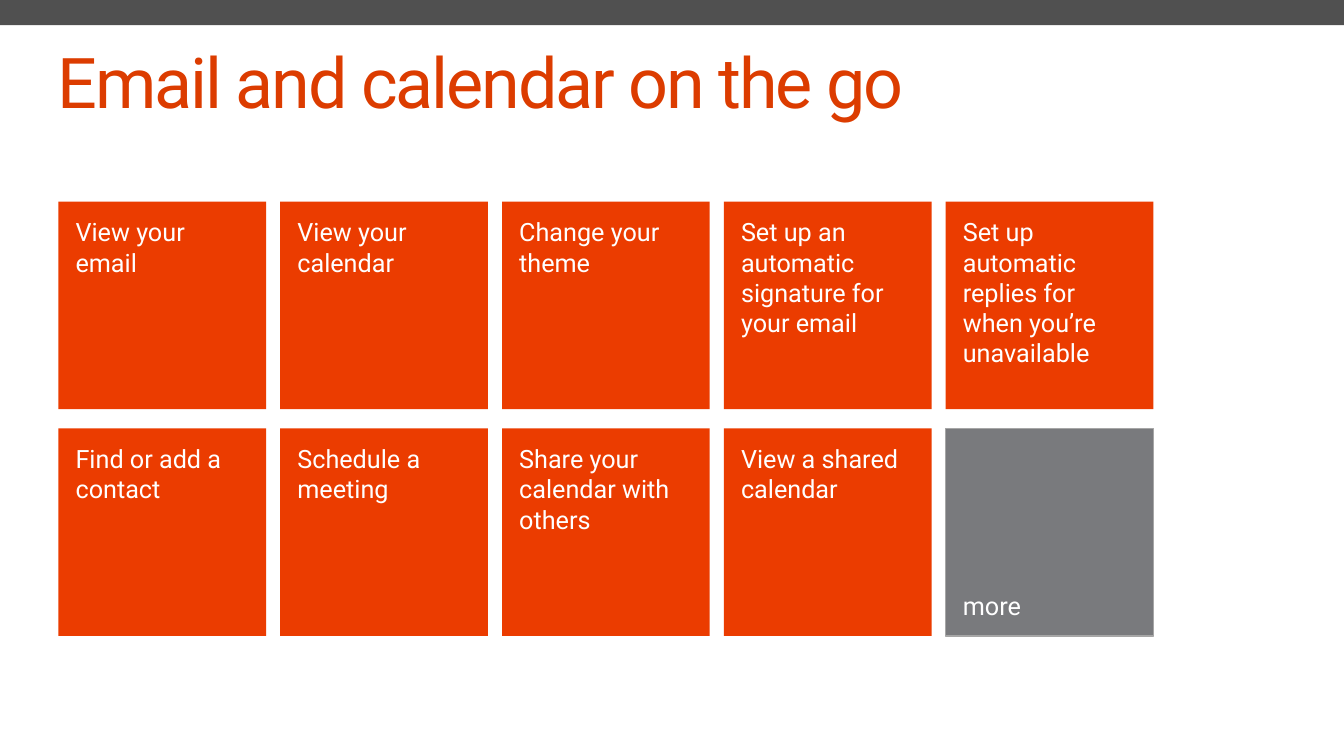
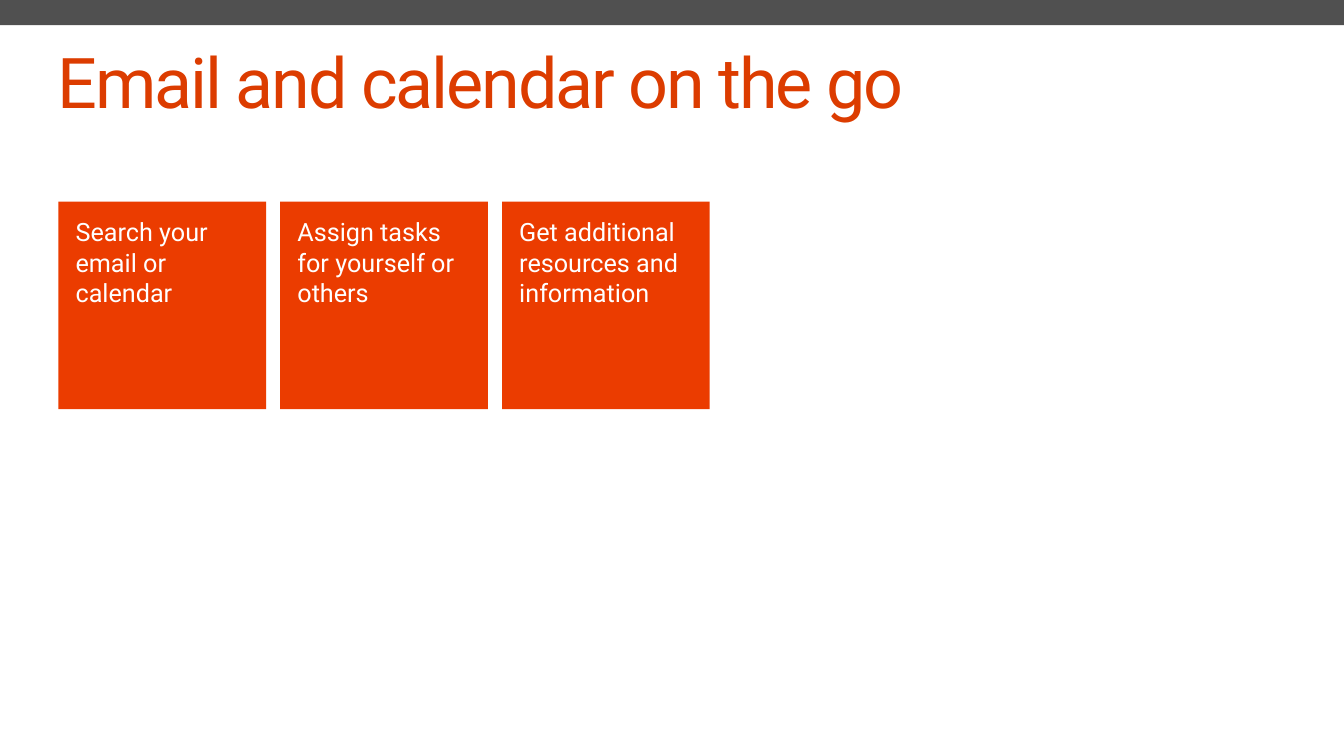
import pptx
import pptx.dml.color
import pptx.enum.shapes
import pptx.enum.text
import pptx.util

Inches = pptx.util.Inches
Anchor = pptx.enum.text.MSO_ANCHOR

THEME = {
    "font": "Roboto",
    "title_size": 50,
    "tile_size": 18,
    "band": "505050",
    "title": "DC3C00",
    "tile": "EB3C00",
    "more": "797A7D",
    "more_line": "A6A6A6",
    "text": "FFFFFF",
}

# Tile grid, in inches
COLUMNS = 5
GRID_LEFT, GRID_TOP = 0.58, 2
COLUMN_PITCH, ROW_PITCH = 2.2, 2.25
TILE_SIDE = 2.06

TITLE = "Email and calendar on the go"
MORE = "more"
SLIDE_TILES = [
    [
        "View your email",
        "View your calendar",
        "Change your theme",
        "Set up an automatic signature for your email",
        "Set up automatic replies for when you’re unavailable",
        "Find or add a contact",
        "Schedule a meeting",
        "Share your calendar with others",
        "View a shared calendar",
        MORE,
    ],
    [
        "Search your email or calendar",
        "Assign tasks for yourself or others",
        "Get additional resources and information",
    ],
]


def add_rectangle(slide, left, top, width, height, fill):
    shape = slide.shapes.add_shape(
        pptx.enum.shapes.MSO_SHAPE.RECTANGLE, left, top, width, height)
    shape.shadow.inherit = False
    shape.fill.solid()
    shape.fill.fore_color.rgb = pptx.dml.color.RGBColor.from_string(fill)
    shape.line.fill.background()
    return shape


def set_text(shape, text, size, color, margins, anchor=Anchor.TOP):
    frame = shape.text_frame
    frame.text = text
    frame_format = dict(zip(
        ("margin_left", "margin_top", "margin_right", "margin_bottom"),
        map(Inches, margins)))
    frame_format.update(word_wrap=True, vertical_anchor=anchor,
                        auto_size=pptx.enum.text.MSO_AUTO_SIZE.NONE)
    for name, value in frame_format.items():
        setattr(frame, name, value)
    paragraph = frame.paragraphs[0]
    paragraph.alignment = pptx.enum.text.PP_ALIGN.LEFT
    font = paragraph.runs[0].font
    for name, value in {"name": THEME["font"], "size": pptx.util.Pt(size)}.items():
        setattr(font, name, value)
    font.color.rgb = pptx.dml.color.RGBColor.from_string(color)
    return paragraph


presentation = pptx.Presentation()
presentation.slide_width = Inches(13.33)
presentation.slide_height = Inches(7.5)
layout = presentation.slide_layouts.get_by_name("Title Only")
slides = [presentation.slides.add_slide(layout) for tiles in SLIDE_TILES]

# The top band is drawn once and moved to the shared layout
band = add_rectangle(slides[0], 0, 0, presentation.slide_width,
                     Inches(0.25), THEME["band"])
band.element.nvSpPr.cNvPr.set("id", "20")
layout.shapes.element.insert(2, band.element)

for slide, tiles in zip(slides, SLIDE_TILES):
    # Title
    title = slide.shapes.title
    title_place = {"left": 0.57, "top": 0.48, "width": 12.19, "height": 0.82}
    for name, value in title_place.items():
        setattr(title, name, Inches(value))
    paragraph = set_text(title, TITLE, THEME["title_size"], THEME["title"],
                         (0, 0, 0, 0))
    paragraph.line_spacing = 0.9
    paragraph.runs[0].font._element.set("spc", "-150")

    # Tiles, filled row by row
    for index, text in enumerate(tiles):
        row, column = divmod(index, COLUMNS)
        is_more = text == MORE
        tile = add_rectangle(
            slide,
            Inches(GRID_LEFT + column * COLUMN_PITCH),
            Inches(GRID_TOP + row * ROW_PITCH),
            Inches(TILE_SIDE), Inches(TILE_SIDE),
            THEME["more" if is_more else "tile"])
        set_text(tile, text, THEME["tile_size"], THEME["text"],
                 (0.17, 0.15, 0.15, 0.15 if is_more else 0.05),
                 Anchor.BOTTOM if is_more else Anchor.TOP)
        if is_more:
            tile.line.color.rgb = pptx.dml.color.RGBColor.from_string(
                THEME["more_line"])
            tile.line.width = pptx.util.Pt(0.85)

presentation.save("out.pptx")
